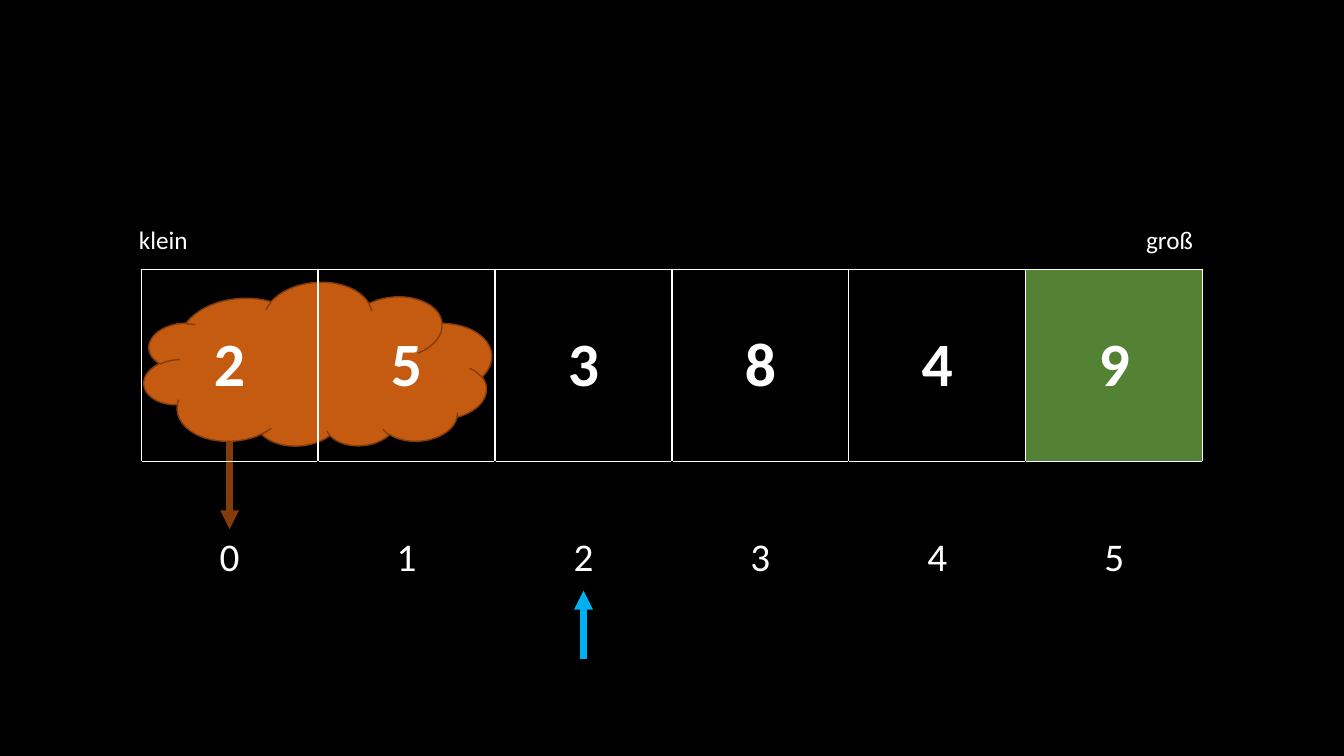
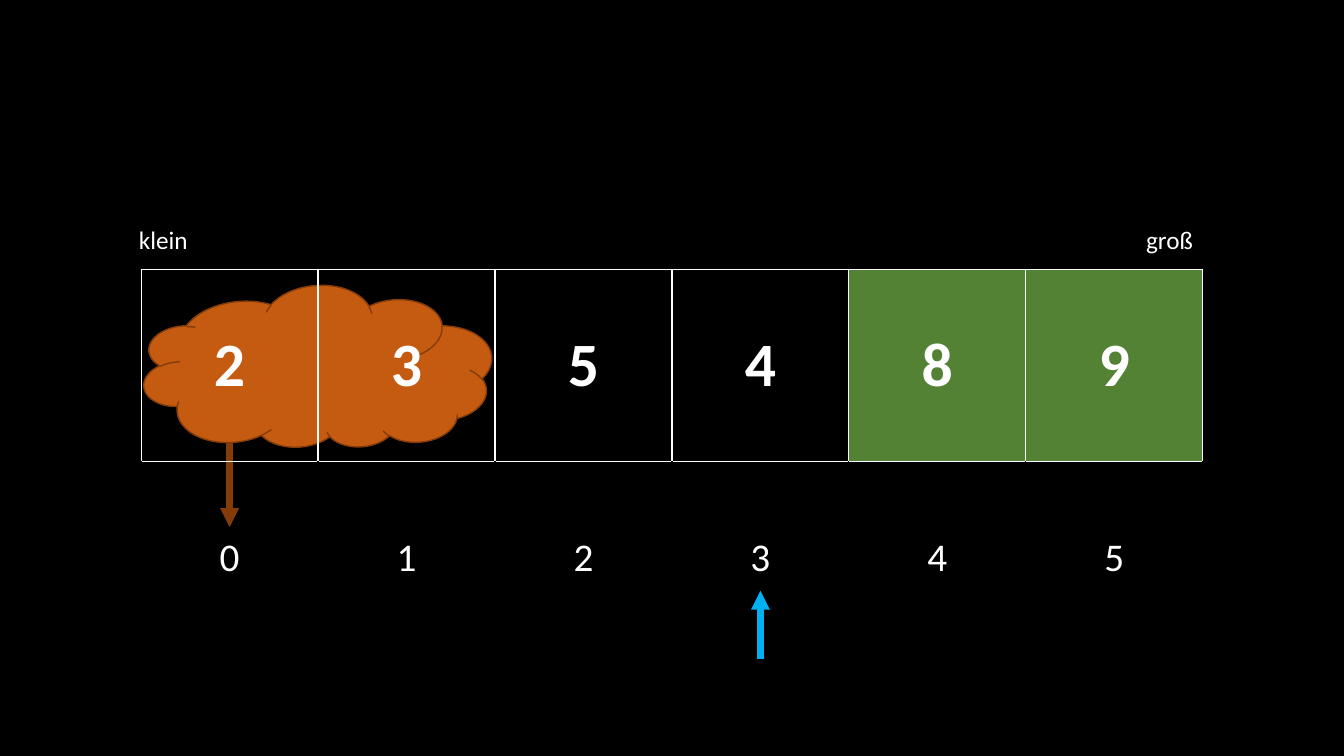
from dataclasses import dataclass

from lxml import etree
from pptx import Presentation
from pptx.dml.color import RGBColor
from pptx.enum import shapes, text
from pptx.oxml import ns
from pptx.util import Inches, Pt


@dataclass(frozen=True)
class Theme:
    font: str = "Calibri"
    background: str = "000000"
    ink: str = "FFFFFF"
    sorted_fill: str = "548235"
    cloud_fill: str = "C55A11"
    cloud_line: str = "843C0B"
    pointer: str = "00B0F0"
    value_size: int = 44
    index_size: int = 28
    label_size: int = 18
    arrow_width: float = 4.5
    thin_line: int = 1


THEME = Theme()

# Grid of the array: values above, indices below
LEFT, TOP, WIDTH, ROW_HEIGHT = 1.4, 2.67, 10.53, 1.91

# Values, first sorted position, pointer position, cloud top and height, cloud arrow start
STEPS = [
    ([2, 5, 3, 8, 4, 9], 5, 2, 2.81, 1.65, 3.87),
    ([2, 3, 5, 4, 8, 9], 4, 3, 2.84, 1.63, 3.85),
]


def rgb(color):
    return RGBColor.from_string(color)


def style_paragraph(paragraph, size, align, bold=False):
    paragraph.alignment = align
    font = paragraph.font
    font.name, font.size, font.bold = THEME.font, Pt(size), bold
    font.color.rgb = rgb(THEME.ink)


def add_label(slide, words, left, align):
    label = slide.shapes.add_textbox(Inches(left), Inches(2.18), Inches(1.51), Inches(0.4))
    frame = label.text_frame
    frame.word_wrap = True
    frame.auto_size = text.MSO_AUTO_SIZE.SHAPE_TO_FIT_TEXT
    frame.text = words
    style_paragraph(frame.paragraphs[0], THEME.label_size, align)


def add_arrow(parent, x, start, end, color):
    arrow = parent.shapes.add_connector(
        shapes.MSO_CONNECTOR.STRAIGHT, Inches(x), Inches(start), Inches(x), Inches(end))
    arrow.line.color.rgb = rgb(color)
    arrow.line.width = Pt(THEME.arrow_width)
    etree.SubElement(arrow.line._get_or_add_ln(), ns.qn("a:tailEnd"), type="triangle")
    etree.SubElement(arrow._element.spPr, ns.qn("a:effectLst"))


def add_cloud(slide, top, height, arrow_start, arrow_x):
    group = slide.shapes.add_group_shape()
    add_arrow(group, arrow_x, arrow_start, arrow_start + 1.38, THEME.cloud_line)
    cloud = group.shapes.add_shape(
        shapes.MSO_SHAPE.CLOUD, Inches(1.42), Inches(top), Inches(3.46), Inches(height))
    cloud.shadow.inherit = False
    cloud.rotation = 355.5
    cloud._element.spPr.xfrm.set("flipV", "1")
    cloud.fill.solid()
    cloud.fill.fore_color.rgb = rgb(THEME.cloud_fill)
    cloud.line.color.rgb = rgb(THEME.cloud_line)
    cloud.line.width = Pt(THEME.thin_line)


def set_borders(cell, **colors):
    properties = cell._tc.get_or_add_tcPr()
    for side in "LRTB":
        line = etree.SubElement(properties, ns.qn(f"a:ln{side}"), w=str(Pt(THEME.thin_line)))
        fill = etree.SubElement(line, ns.qn("a:solidFill"))
        etree.SubElement(fill, ns.qn("a:srgbClr"), val=colors.get(side, THEME.ink))


def fill_cell(cell, content, size, bold):
    cell.text = str(content)
    cell.vertical_anchor = text.MSO_ANCHOR.MIDDLE
    style_paragraph(cell.text_frame.paragraphs[0], size, text.PP_ALIGN.CENTER, bold)
    cell.fill.background()


def add_array(slide, values, first_sorted):
    array = slide.shapes.add_table(
        2, len(values), Inches(LEFT), Inches(TOP), Inches(WIDTH), Inches(2 * ROW_HEIGHT)).table
    array.first_row = array.horz_banding = False
    hidden = dict.fromkeys("LRB", THEME.background)
    for index, value in enumerate(values):
        value_cell, index_cell = array.cell(0, index), array.cell(1, index)
        set_borders(value_cell)
        set_borders(index_cell, **hidden)
        fill_cell(value_cell, value, THEME.value_size, True)
        fill_cell(index_cell, index, THEME.index_size, False)
        if index >= first_sorted:
            value_cell.fill.solid()
            value_cell.fill.fore_color.rgb = rgb(THEME.sorted_fill)


def add_step(prs, values, first_sorted, position, cloud_top, cloud_height, arrow_start):
    slide = prs.slides.add_slide(prs.slide_layouts[6])
    column = WIDTH / len(values)
    add_cloud(slide, cloud_top, cloud_height, arrow_start, LEFT + column / 2)
    add_array(slide, values, first_sorted)
    add_label(slide, "groß", 10.42, text.PP_ALIGN.RIGHT)
    add_label(slide, "klein", 1.28, text.PP_ALIGN.LEFT)
    add_arrow(slide, LEFT + column * (position + 0.5), 6.54, 5.86, THEME.pointer)


def main():
    prs = Presentation()
    prs.slide_width, prs.slide_height = Inches(13.33), Inches(7.5)
    # Shared black background
    backdrop = prs.slide_master.background.fill
    backdrop.solid()
    backdrop.fore_color.rgb = rgb(THEME.background)
    for step in STEPS:
        add_step(prs, *step)
    prs.save("out.pptx")


if __name__ == "__main__":
    main()
